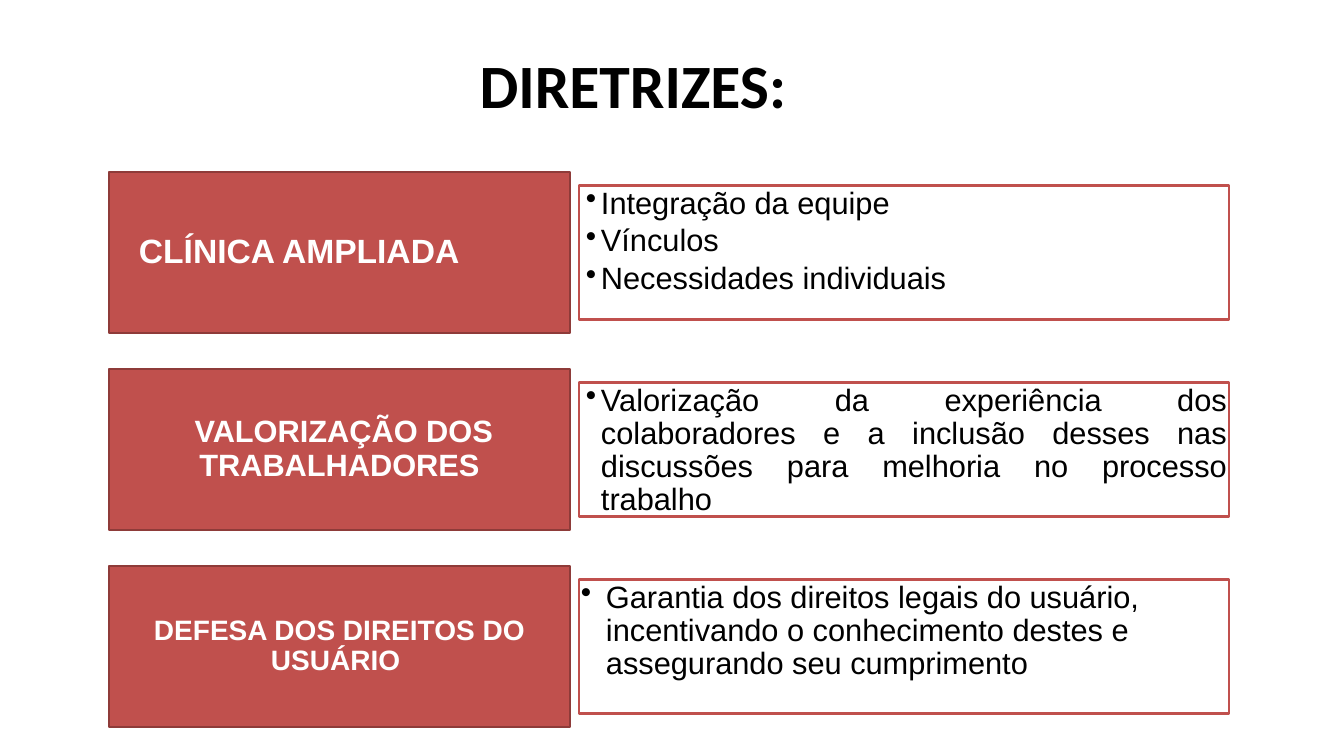
from lxml import etree
from pptx import Presentation
from pptx import util as u
from pptx.dml.color import RGBColor
from pptx.enum import shapes, text
from pptx.oxml.ns import qn

RED = RGBColor(0xC0, 0x50, 0x4D)
DARK_RED = RGBColor(0x8E, 0x3B, 0x39)
WHITE = RGBColor(0xFF, 0xFF, 0xFF)
BLACK = RGBColor(0, 0, 0)

LEFT, CENTER, JUSTIFY = (text.PP_ALIGN.LEFT, text.PP_ALIGN.CENTER,
                         text.PP_ALIGN.JUSTIFY)

# Content: heading, its format, bullet points, their format (px and points)
HEADING = "DIRETRIZES: "
GUIDELINES = [
    ("CLÍNICA AMPLIADA",
     {"size": 24, "align": JUSTIFY, "margin": 20, "insets": (10, 5)},
     ["Integração da equipe", "Vínculos ", "Necessidades individuais "],
     {"align": JUSTIFY, "margin": 20, "indent": -15}),
    (" VALORIZAÇÃO DOS TRABALHADORES",
     {"size": 22, "align": CENTER, "insets": (9, 5)},
     ["Valorização da experiência dos colaboradores e a inclusão desses nas "
      "discussões para melhoria no processo trabalho"],
     {"align": JUSTIFY, "margin": 20, "indent": -15}),
    ("DEFESA DOS DIREITOS DO USUÁRIO ",
     {"size": 20, "align": CENTER, "insets": (8, 4)},
     ["Garantia dos direitos legais do usuário, incentivando o conhecimento "
      "destes e assegurando seu cumprimento"],
     {"align": LEFT, "margin": 25, "indent": -25}),
]

# Layout in px
SLIDE = (1344, 756)
HEADING_BOX = (69, 21, 1142, 126)
NAME_LEFT, NAME_TOP, NAME_WIDTH, NAME_HEIGHT = 109, 172, 461, 161
POINTS_LEFT, POINTS_WIDTH, POINTS_HEIGHT = 579, 650, 134
ROW_STEP = 197
EMU_PER_PX = 914400 / 100.8


def px(length):
    return u.Emu(round(length * EMU_PER_PX))


def write(shape, lines, size, color, align, font="Arial", bold=False,
          anchor=text.MSO_ANCHOR.MIDDLE, insets=(10, 5), spacing=0.9,
          margin=0, indent=0, bullet=False):
    frame = shape.text_frame
    across, down = map(px, insets)
    settings = {"word_wrap": True, "vertical_anchor": anchor,
                "margin_left": across, "margin_right": across,
                "margin_top": down, "margin_bottom": down}
    for name, value in settings.items():
        setattr(frame, name, value)
    for number, line in enumerate(lines):
        paragraph = frame.add_paragraph() if number else frame.paragraphs[0]
        paragraph.alignment = align
        paragraph.line_spacing = spacing
        paragraph.space_before = u.Pt(3.3 if number else 0)
        run = paragraph.add_run()
        run.text = line
        for name, value in {"name": font, "size": u.Pt(size),
                            "bold": bold}.items():
            setattr(run.font, name, value)
        run.font.color.rgb = color
        properties = paragraph._p.get_or_add_pPr()
        properties.set("marL", str(px(margin)))
        properties.set("indent", str(px(indent)))
        if bullet:
            paragraph.level = 1
            tint = etree.SubElement(properties, qn("a:buClr"))
            etree.SubElement(tint, qn("a:srgbClr")).set("val", str(color))
            etree.SubElement(properties, qn("a:buChar")).set("char", "•")


def add_panel(slide, box, fill, line):
    panel = slide.shapes.add_shape(shapes.MSO_SHAPE.RECTANGLE, *map(px, box))
    panel.shadow.inherit = False
    panel.fill.solid()
    panel.fill.fore_color.rgb = fill
    panel.line.color.rgb = line
    panel.line.width = u.Pt(2)
    return panel


def main():
    deck = Presentation()
    deck.slide_width, deck.slide_height = map(px, SLIDE)
    slide = deck.slides.add_slide(deck.slide_layouts[6])

    # Heading
    heading = slide.shapes.add_textbox(*map(px, HEADING_BOX))
    write(heading, [HEADING], 44, BLACK, CENTER, font="Calibri", bold=True,
          spacing=1.0)

    # One row per guideline, points centred beside the name
    for row, (name, name_format, points, points_format) in enumerate(GUIDELINES):
        top = NAME_TOP + row * ROW_STEP
        points_top = top + (NAME_HEIGHT - POINTS_HEIGHT) / 2
        points_panel = add_panel(
            slide, (POINTS_LEFT, points_top, POINTS_WIDTH, POINTS_HEIGHT),
            WHITE, RED)
        write(points_panel, points, 22, BLACK, insets=(2, 2), bullet=True,
              anchor=text.MSO_ANCHOR.TOP, **points_format)
        name_panel = add_panel(
            slide, (NAME_LEFT, top, NAME_WIDTH, NAME_HEIGHT), RED, DARK_RED)
        write(name_panel, [name], color=WHITE, bold=True, **name_format)

    deck.save("out.pptx")


if __name__ == "__main__":
    main()
